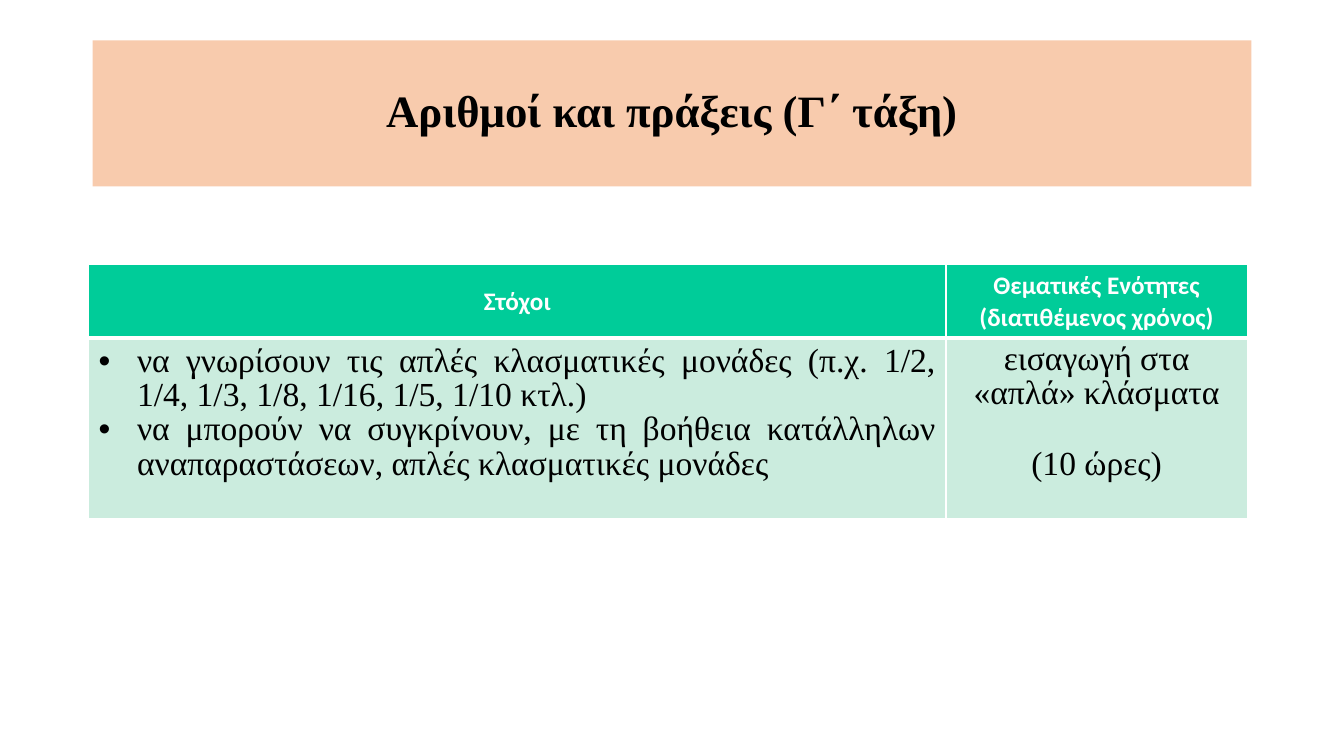
from lxml import etree
from pptx import Presentation
from pptx.dml.color import RGBColor
from pptx.enum.text import MSO_ANCHOR, PP_ALIGN
from pptx.oxml.ns import qn
from pptx.util import Inches, Pt

CENTER, JUSTIFY = PP_ALIGN.CENTER, PP_ALIGN.JUSTIFY
TOP, MIDDLE = MSO_ANCHOR.TOP, MSO_ANCHOR.MIDDLE
THIN, THICK = 0.91, 2.95
TITLE_ONLY = 5


def color(value):
    return RGBColor.from_string(value)


class SlideBuilder:
    serif, sans = "Times New Roman", "Calibri"
    black, white = "000000", "FFFFFF"
    peach, green, mint = "F8CBAD", "00CC99", "CBECDE"

    def __init__(self, presentation):
        self.slide = presentation.slides.add_slide(presentation.slide_layouts[TITLE_ONLY])

    def format_paragraph(self, paragraph, font_name, size, text_color, bold, alignment, spacing):
        paragraph.alignment = alignment
        paragraph.line_spacing = spacing
        font = paragraph.font
        font.name, font.size, font.bold = font_name, Pt(size), bold
        font.color.rgb = color(text_color)

    def add_title(self, text, left, top, width, height):
        title = self.slide.shapes.title
        title.left, title.top = Inches(left), Inches(top)
        title.width, title.height = Inches(width), Inches(height)
        title.fill.solid()
        title.fill.fore_color.rgb = color(self.peach)
        title.text_frame.text = text
        title.text_frame.vertical_anchor = MIDDLE
        self.format_paragraph(title.text_frame.paragraphs[0], self.serif, 32, self.black, True, CENTER, 0.9)

    def add_table(self, left, top, widths, heights):
        frame = self.slide.shapes.add_table(
            len(heights), len(widths), Inches(left), Inches(top),
            Inches(sum(widths)), Inches(sum(heights)))
        for column, width in zip(frame.table.columns, widths):
            column.width = Inches(width)
        for row, height in zip(frame.table.rows, heights):
            row.height = Inches(height)
        return frame.table

    def add_borders(self, cell, top, bottom):
        properties = cell._tc.get_or_add_tcPr()
        for side, width in (("L", THIN), ("R", THIN), ("T", top), ("B", bottom)):
            line = etree.SubElement(properties, qn(f"a:ln{side}"), w=str(Pt(width)))
            fill = etree.SubElement(line, qn("a:solidFill"))
            etree.SubElement(fill, qn("a:srgbClr"), val=self.white)

    def fill_cell(self, cell, lines, fill, anchor, borders, top_margin=0.05):
        """Write the lines and return their paragraphs."""
        self.add_borders(cell, *borders)
        cell.fill.solid()
        cell.fill.fore_color.rgb = color(fill)
        cell.vertical_anchor = anchor
        cell.margin_left = cell.margin_right = Inches(0.1)
        cell.margin_top, cell.margin_bottom = Inches(top_margin), Inches(0.05)
        cell.text_frame.text = "\n".join(lines)
        return cell.text_frame.paragraphs

    def header_cell(self, cell, lines):
        for paragraph in self.fill_cell(cell, lines, self.green, MIDDLE, (THIN, THICK)):
            self.format_paragraph(paragraph, self.sans, 18, self.white, True, CENTER, 1.04)

    def body_cell(self, cell, lines, alignment, bulleted=False, top_margin=0.05):
        paragraphs = self.fill_cell(cell, lines, self.mint, TOP, (THICK, THIN), top_margin)
        for paragraph in paragraphs:
            if bulleted:
                self.add_bullet(paragraph)
            self.format_paragraph(paragraph, self.serif, 24, self.black, False, alignment, 0.92)
        return paragraphs

    def add_bullet(self, paragraph):
        properties = paragraph._p.get_or_add_pPr()
        properties.set("marL", str(Inches(0.38)))
        properties.set("indent", str(-Inches(0.38)))
        etree.SubElement(properties, qn("a:buFont"), typeface="Arial")
        etree.SubElement(properties, qn("a:buChar"), char="•")


def main():
    presentation = Presentation()
    presentation.slide_width, presentation.slide_height = Inches(13.34), Inches(7.5)
    builder = SlideBuilder(presentation)

    builder.add_title("Αριθμοί και πράξεις (Γ΄ τάξη)", 0.92, 0.4, 11.5, 1.45)

    table = builder.add_table(0.88, 2.62, widths=(8.51, 2.99), heights=(0.72, 1.79))
    builder.header_cell(table.cell(0, 0), ["Στόχοι"])
    builder.header_cell(table.cell(0, 1), ["Θεματικές Ενότητες", "(διατιθέμενος χρόνος)"])
    goals = [
        "να γνωρίσουν τις απλές κλασματικές μονάδες (π.χ. 1/2, 1/4, 1/3, 1/8, 1/16, 1/5, 1/10 κτλ.)",
        "να μπορούν να συγκρίνουν, με τη βοήθεια κατάλληλων αναπαραστάσεων, απλές κλασματικές μονάδες",
    ]
    builder.body_cell(table.cell(1, 0), goals, JUSTIFY, bulleted=True, top_margin=0.07)
    unit, hours = builder.body_cell(
        table.cell(1, 1), ["εισαγωγή στα «απλά» κλάσματα", "(10 ώρες)"], CENTER)
    hours.space_before = Pt(26)

    presentation.save("out.pptx")


if __name__ == "__main__":
    main()
